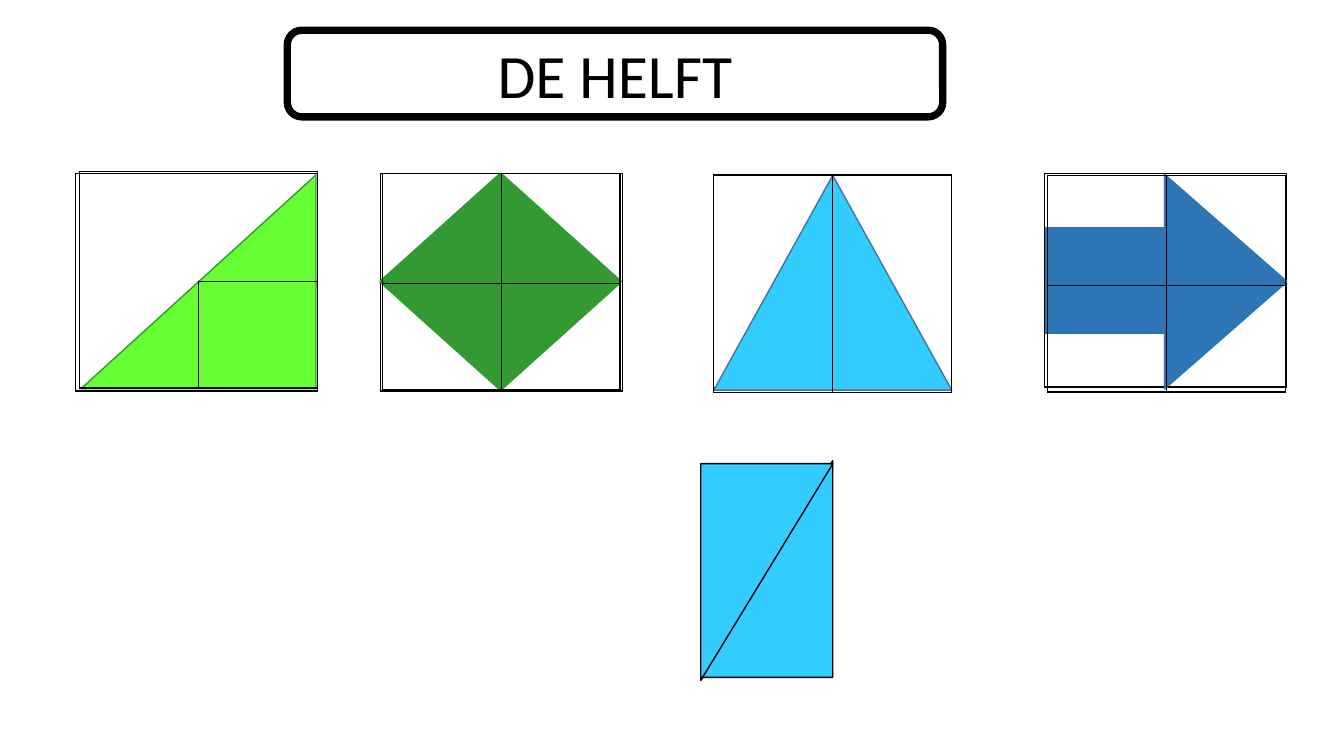
from dataclasses import dataclass, field

import lxml.etree
import pptx
import pptx.dml.color
import pptx.enum.shapes
import pptx.enum.text
import pptx.oxml.ns
import pptx.util

Inches = pptx.util.Inches
Pt = pptx.util.Pt
Preset = pptx.enum.shapes.MSO_SHAPE
qn = pptx.oxml.ns.qn


@dataclass(frozen=True)
class Theme:
    black: str = "000000"
    white: str = "FFFFFF"
    lime: str = "66FF33"
    green: str = "339933"
    sky: str = "33CCFF"
    steel: str = "43739E"
    blue: str = "2E75B6"
    font: str = "Calibri"
    title_size: float = 44
    title_line: float = 5.25
    thin_line: float = 1
    plain_table: str = "{2D5ABB26-0587-4C30-8999-92F81FD0307C}"


THEME = Theme()
Cell = tuple[int, int]


@dataclass(frozen=True)
class Figure:
    left: float
    top: float
    width: float
    height: float
    fill: str
    line: str
    preset: int = Preset.RIGHT_TRIANGLE
    flip: str = ""
    rotation: int = 0
    line_width: float = THEME.thin_line


@dataclass(frozen=True)
class Grid:
    """A table with a black frame; cells in `open_cells` have no inner edges."""
    left: float
    top: float
    columns: list[float]
    rows: list[float]
    open_cells: set[Cell] = field(default_factory=set)
    filled_cells: set[Cell] = field(default_factory=set)
    fill: str = THEME.white


def colour(value: str) -> pptx.dml.color.RGBColor:
    return pptx.dml.color.RGBColor.from_string(value)


def draw_figure(shapes, figure: Figure):
    shape = shapes.add_shape(figure.preset, Inches(figure.left), Inches(figure.top),
                             Inches(figure.width), Inches(figure.height))
    shape.shadow.inherit = False
    shape.rotation = figure.rotation
    shape.fill.solid()
    shape.fill.fore_color.rgb = colour(figure.fill)
    shape.line.color.rgb = colour(figure.line)
    shape.line.width = Pt(figure.line_width)
    frame = shape.element.spPr.get_or_add_xfrm()
    for axis in figure.flip:
        frame.set(f"flip{axis}", "1")
    return shape


def draw_group(shapes, figures: list[Figure]) -> None:
    group = shapes.add_group_shape()
    for figure in figures:
        draw_figure(group.shapes, figure)


def write_text(shape, text: str, *, size: float, color: str, font: str) -> None:
    frame = shape.text_frame
    frame.word_wrap = True
    frame.vertical_anchor = pptx.enum.text.MSO_ANCHOR.MIDDLE
    paragraph = frame.paragraphs[0]
    paragraph.alignment = pptx.enum.text.PP_ALIGN.CENTER
    run = paragraph.add_run()
    run.text = text
    run.font.size = Pt(size)
    run.font.name = font
    run.font.color.rgb = colour(color)


def add_border(cell, side: str) -> None:
    properties = cell._tc.get_or_add_tcPr()
    border = lxml.etree.SubElement(properties, qn(f"a:ln{side}"), w=str(Pt(THEME.thin_line)))
    fill = lxml.etree.SubElement(border, qn("a:solidFill"))
    lxml.etree.SubElement(fill, qn("a:srgbClr"), val=THEME.black)


def draw_grid(shapes, grid: Grid) -> None:
    row_count, column_count = len(grid.rows), len(grid.columns)
    table = shapes.add_table(row_count, column_count, Inches(grid.left), Inches(grid.top),
                             Inches(sum(grid.columns)), Inches(sum(grid.rows))).table
    table.first_row = table.horz_banding = False
    table._tbl.tblPr.find(qn("a:tableStyleId")).text = THEME.plain_table
    for column, width in zip(table.columns, grid.columns):
        column.width = Inches(width)
    for row, height in zip(table.rows, grid.rows):
        row.height = Inches(height)

    for r in range(row_count):
        for c in range(column_count):
            cell = table.cell(r, c)
            neighbours = {"L": (r, c - 1), "R": (r, c + 1), "T": (r - 1, c), "B": (r + 1, c)}
            for side, (nr, nc) in neighbours.items():
                outer = not (0 <= nr < row_count and 0 <= nc < column_count)
                if outer or not grid.open_cells & {(r, c), (nr, nc)}:
                    add_border(cell, side)
            if (r, c) in grid.filled_cells:
                cell.fill.solid()
                cell.fill.fore_color.rgb = colour(grid.fill)
            else:
                cell.fill.background()


def frame_grid(left: float, top: float, column: float, row: float,
               filled: set[Cell] = frozenset()) -> Grid:
    every_cell = {(r, c) for r in range(4) for c in range(4)}
    return Grid(left, top, [column] * 4, [row] * 4, every_cell, filled, THEME.blue)


def halving_grid(left: float, top: float, rows: list[float],
                 open_cells: set[Cell] = frozenset()) -> Grid:
    return Grid(left, top, [1.18, 1.18], rows, open_cells)


def main() -> None:
    deck = pptx.Presentation()
    deck.slide_width, deck.slide_height = Inches(13.33), Inches(7.5)
    shapes = deck.slides.add_slide(deck.slide_layouts[6]).shapes
    quarters = [1.09, 1.06]

    # Diamond
    draw_grid(shapes, frame_grid(3.77, 1.72, 0.6, 0.54))
    draw_group(shapes, [
        Figure(left, top, 1.19, 1.07, THEME.green, THEME.green, flip=across + down)
        for left, across in ((4.97, ""), (3.77, "H"))
        for top, down in ((1.72, ""), (2.8, "V"))
    ])

    # Title
    title = draw_figure(shapes, Figure(2.85, 0.3, 6.5, 0.86, THEME.white, THEME.black,
                                       Preset.ROUNDED_RECTANGLE,
                                       line_width=THEME.title_line))
    write_text(title, "DE HELFT", size=THEME.title_size, color=THEME.black, font=THEME.font)

    # Frames of the triangle and the arrow, with the arrow's shaft
    shaft = {(r, c) for r in (1, 2) for c in (0, 1)}
    draw_grid(shapes, frame_grid(7.08, 1.73, 0.59, 0.53))
    draw_grid(shapes, frame_grid(10.36, 1.72, 0.6, 0.53, shaft))

    # Triangle and arrow head
    draw_figure(shapes, Figure(7.08, 1.74, 2.36, 2.13, THEME.sky, THEME.steel,
                               Preset.ISOSCELES_TRIANGLE))
    draw_group(shapes, [
        Figure(11.55, top, 1.21, 1.06, THEME.blue, THEME.blue, flip=down)
        for top, down in ((1.73, ""), (2.8, "V"))
    ])

    # Half square
    draw_grid(shapes, frame_grid(0.75, 1.72, 0.6, 0.54))
    draw_figure(shapes, Figure(0.91, 1.63, 2.12, 2.33, THEME.lime, THEME.green,
                               flip="HV", rotation=90))

    # Dividing lines over the first three figures
    draw_grid(shapes, halving_grid(3.79, 1.72, quarters))
    draw_grid(shapes, halving_grid(0.79, 1.7, quarters, {(0, 0)}))
    draw_grid(shapes, halving_grid(7.08, 1.74, [sum(quarters)]))

    # Rectangle made of the two triangle halves
    for top, rotation in ((4.57, 0), (4.6, 180)):
        draw_figure(shapes, Figure(6.95, top, 1.31, 2.15, THEME.sky, THEME.black,
                                   flip="H", rotation=rotation))

    # Dividing lines over the arrow
    draw_grid(shapes, halving_grid(10.39, 1.74, quarters))

    deck.save("out.pptx")


if __name__ == "__main__":
    main()
